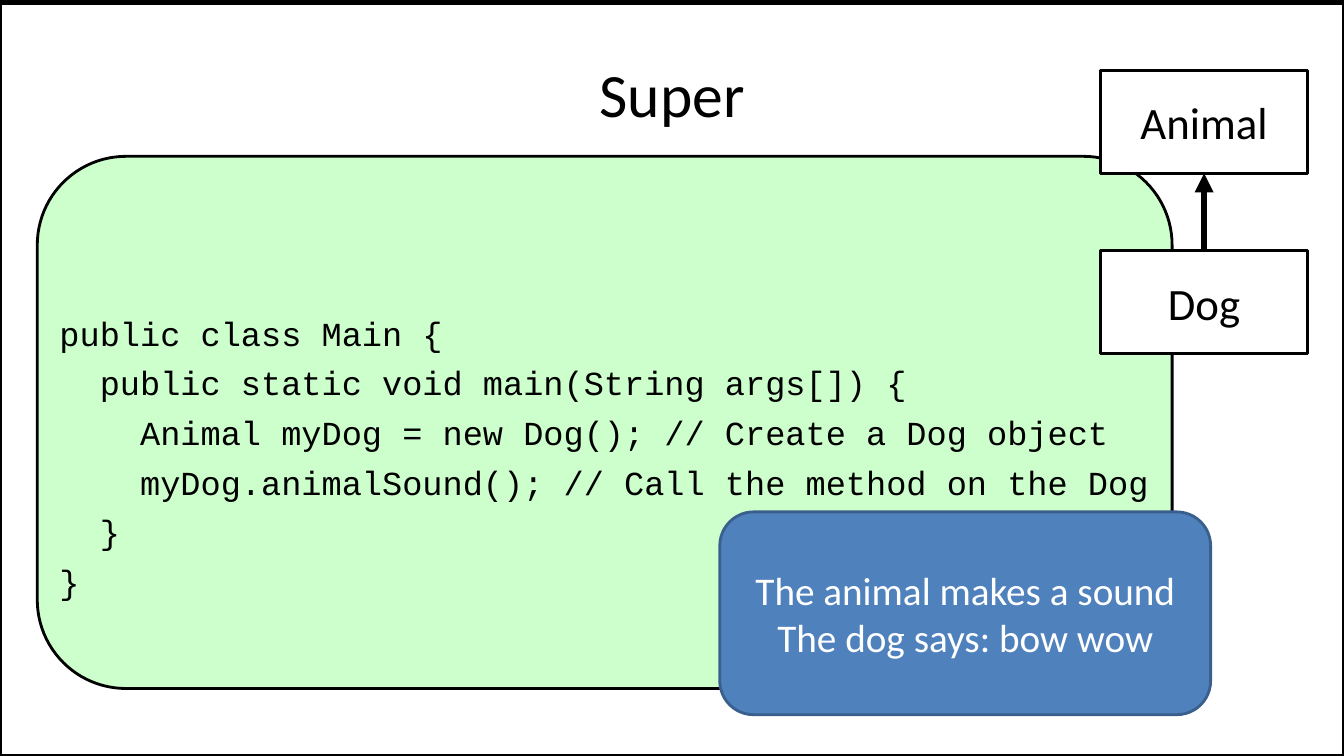
"""Build the slide on calling an overridden method through a superclass."""
from dataclasses import dataclass

import pptx
import pptx.dml.color
import pptx.enum.shapes
import pptx.enum.text
import pptx.oxml.ns
import pptx.util
from lxml import etree

Cm = pptx.util.Cm
Pt = pptx.util.Pt
Shape = pptx.enum.shapes.MSO_SHAPE
Align = pptx.enum.text.PP_ALIGN
Anchor = pptx.enum.text.MSO_ANCHOR


@dataclass(frozen=True)
class Theme:
    """Colours, fonts and type sizes of the slide."""
    ink: str = "000000"
    paper: str = "FFFFFF"
    code_panel: str = "CCFFCC"
    output_panel: str = "4F81BD"
    output_edge: str = "3A5F8C"
    text_font: str = "Calibri"
    code_font: str = "Courier New"
    title_size: int = 44
    class_size: int = 32
    output_size: int = 28
    code_size: int = 24


THEME = Theme()

CODE = """public class Main {
  public static void main(String args[]) {
    Animal myDog = new Dog(); // Create a Dog object
    myDog.animalSound(); // Call the method on the Dog
  }
}"""

OUTPUT = "The animal makes a sound\nThe dog says: bow wow"


def colour(value):
    """Return the colour object for a hexadecimal value."""
    return pptx.dml.color.RGBColor.from_string(value)


def write(box, text, size, ink=THEME.ink, font=THEME.text_font,
          align=Align.CENTER, anchor=Anchor.MIDDLE, space_before=0):
    """Fill a box with evenly formatted paragraphs."""
    frame = box.text_frame
    frame.word_wrap = True
    frame.vertical_anchor = anchor
    frame.text = text
    for para in frame.paragraphs:
        para.alignment = align
        para.space_before = Pt(space_before)
        for span in para.runs:
            span.font.name = font
            span.font.size = Pt(size)
            span.font.color.rgb = colour(ink)


def add_panel(page, kind, left, top, width, height,
              fill=None, line=THEME.ink, weight=2):
    """Add an outlined shape, unfilled unless a fill is given."""
    panel = page.shapes.add_shape(kind, left, top, width, height)
    panel.shadow.inherit = False
    if fill:
        panel.fill.solid()
        panel.fill.fore_color.rgb = colour(fill)
    else:
        panel.fill.background()
    panel.line.color.rgb = colour(line)
    panel.line.width = Pt(weight)
    return panel


def add_class_box(page, name, top):
    """Add a class of the inheritance diagram."""
    box = add_panel(page, Shape.RECTANGLE, Cm(27.74), top, Cm(5.21), Cm(2.59),
                    THEME.paper, weight=2.25)
    write(box, name, THEME.class_size)
    return box


def add_inheritance_arrow(page, child, parent):
    """Join the top of the child class to the bottom of its parent."""
    arrow = page.shapes.add_connector(
        pptx.enum.shapes.MSO_CONNECTOR.STRAIGHT, 0, 0, 0, 0)
    arrow.begin_connect(child, 0)
    arrow.end_connect(parent, 2)
    arrow.line.color.rgb = colour(THEME.ink)
    arrow.line.width = Pt(4.5)
    qn = pptx.oxml.ns.qn
    etree.SubElement(arrow.line._get_or_add_ln(), qn("a:tailEnd"), type="triangle")
    etree.SubElement(arrow._element.spPr, qn("a:effectLst"))


def add_code(page):
    """Add the program listing."""
    box = page.shapes.add_textbox(Cm(0.13), Cm(7.75), Cm(29.44), Cm(8.56))
    box.text_frame.margin_left = Cm(1.37)
    write(box, CODE, THEME.code_size, font=THEME.code_font,
          align=Align.LEFT, anchor=Anchor.TOP, space_before=6.7)


def main():
    """Build and save the deck."""
    deck = pptx.Presentation()
    deck.slide_width, deck.slide_height = Cm(33.87), Cm(19.05)
    page = deck.slides.add_slide(deck.slide_layouts[6])

    add_panel(page, Shape.ROUNDED_RECTANGLE,
              Cm(0.94), Cm(3.94), Cm(28.6), Cm(13.41), THEME.code_panel)
    title = page.shapes.add_textbox(Cm(1.7), Cm(0.76), Cm(30.48), Cm(3.18))
    write(title, "Super", THEME.title_size)
    add_code(page)

    for frame_top in (Cm(0.08), Cm(0)):
        add_panel(page, Shape.RECTANGLE, Cm(0), frame_top,
                  deck.slide_width, deck.slide_height, weight=3)

    animal = add_class_box(page, "Animal", Cm(1.78))
    dog = add_class_box(page, "Dog", Cm(6.32))
    add_inheritance_arrow(page, dog, animal)

    output = add_panel(page, Shape.ROUNDED_RECTANGLE,
                       Cm(18.14), Cm(12.9), Cm(12.37), Cm(5.11),
                       THEME.output_panel, THEME.output_edge)
    write(output, OUTPUT, THEME.output_size, THEME.paper)

    deck.save("out.pptx")


if __name__ == "__main__":
    main()
